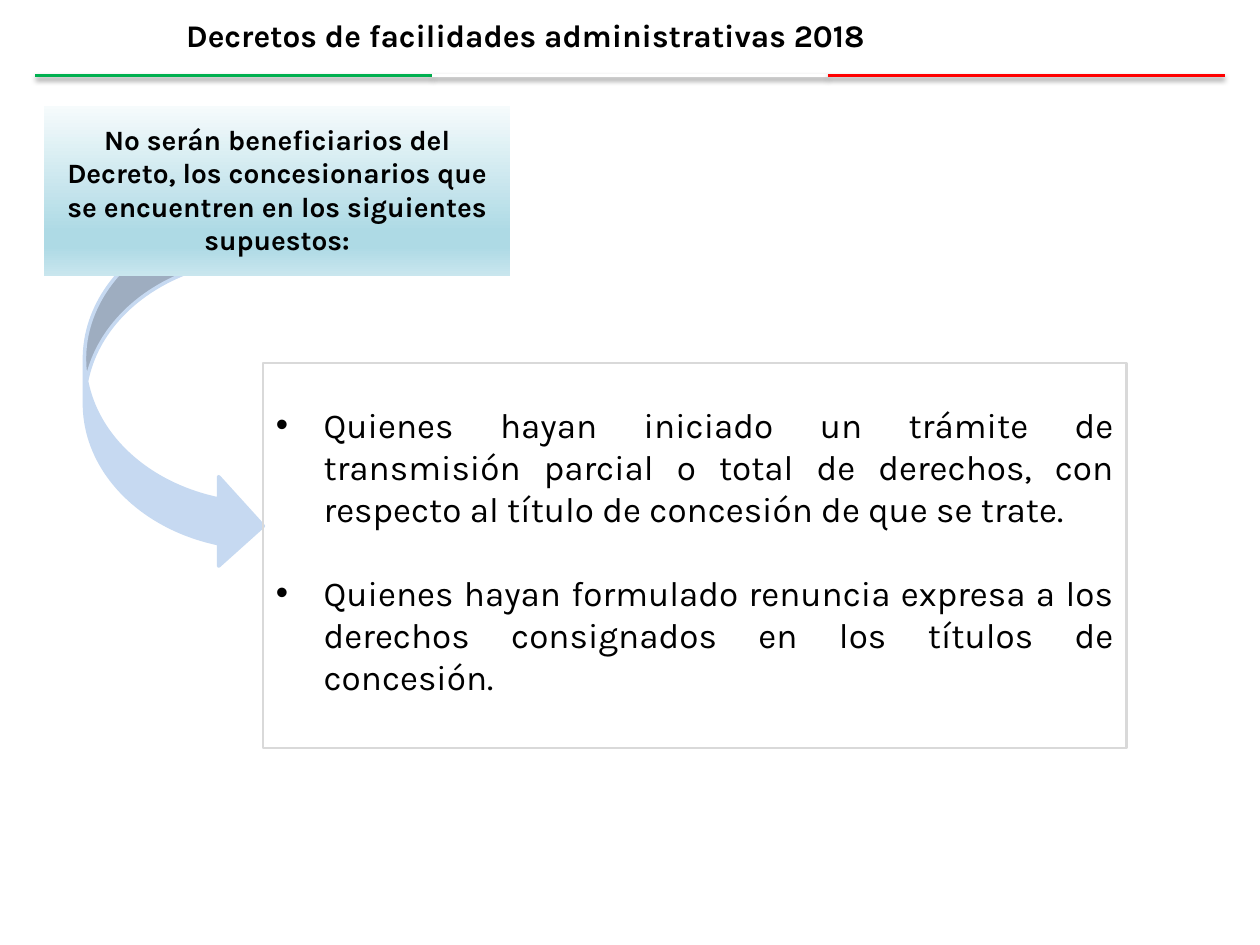
from dataclasses import dataclass

from lxml import etree
from pptx import Presentation
from pptx.dml.color import RGBColor
from pptx.enum.shapes import MSO_CONNECTOR, MSO_SHAPE
from pptx.enum.text import MSO_ANCHOR, PP_ALIGN
from pptx.oxml.ns import qn
from pptx.util import Pt

PX = 9144  # EMU in one px, 100 px to the inch
LINE = MSO_CONNECTOR.STRAIGHT
RECT = MSO_SHAPE.RECTANGLE
ARROW = MSO_SHAPE.CURVED_RIGHT_ARROW
TOP = MSO_ANCHOR.TOP
LEFT, MID, JUST = PP_ALIGN.LEFT, PP_ALIGN.CENTER, PP_ALIGN.JUSTIFY


@dataclass(frozen=True)
class Theme:
    font: str = "Karla"
    ink: str = "000000"
    paper: str = "FFFFFF"
    flag: tuple = ("00B050", "FFFFFF", "FF0000")
    arrow: str = "C6D9F1"
    frame: str = "D9D9D9"
    fade: tuple = ((0, "F6FBFC"), (74, "AEDAE5"), (83, "AEDAE5"), (100, "C9E6EE"))
    title: int = 18
    lead: int = 16
    body: int = 20


def rgb(code):
    return RGBColor.from_string(code)


def node(parent, tag, **attrs):
    return etree.SubElement(parent, qn(tag), {k: str(v) for k, v in attrs.items()})


def write(shape, texts, size, theme, bold=False, align=LEFT, top=5, gap=0, indent=0):
    """Fill a shape with paragraphs; an indent also gives them bullets."""
    frame = shape.text_frame
    frame.word_wrap = True
    frame.vertical_anchor = TOP
    frame.margin_top = top * PX
    for i, text in enumerate(texts):
        para = frame.paragraphs[0] if i == 0 else frame.add_paragraph()
        para.alignment = align
        if indent:
            props = para._p.get_or_add_pPr()
            props.set("marL", str(indent * PX))
            props.set("indent", str(-indent * PX))
            node(props, "a:buFont", typeface="Arial")
            node(props, "a:buChar", char="•")
        if i and gap:
            para.space_before = Pt(gap)
        run = para.add_run()
        run.text = text
        font = run.font
        font.name, font.size, font.bold = theme.font, Pt(size), bold
        font.color.rgb = rgb(theme.ink)


class Canvas:
    def __init__(self, slide, theme):
        self.slide, self.theme = slide, theme

    def rule(self, left, right, y, color):
        """Horizontal line with a soft shadow below it."""
        line = self.slide.shapes.add_connector(
            LINE, left * PX, y * PX, right * PX, y * PX)
        line.line.color.rgb = rgb(color)
        line.line.width = Pt(2)
        effects = node(line._element.spPr, "a:effectLst")
        shade = node(effects, "a:outerShdw", blurRad=Pt(3.1), dist=Pt(1.6),
                     dir=5400000, algn="t", rotWithShape=0)
        tint = node(shade, "a:srgbClr", val=self.theme.ink)
        node(tint, "a:alpha", val=38000)

    def shape(self, kind, box, fill=None, line=None, width=1.25):
        shape = self.slide.shapes.add_shape(kind, *(n * PX for n in box))
        shape.shadow.inherit = False
        if fill:
            shape.fill.solid()
            shape.fill.fore_color.rgb = rgb(fill)
        else:
            shape.fill.background()
        if line:
            shape.line.color.rgb = rgb(line)
            shape.line.width = Pt(width)
        else:
            shape.line.fill.background()
        return shape

    def fade(self, shape, stops):
        """Blend a shape's fill from top to bottom."""
        shape.fill.gradient()
        shape.fill.gradient_angle = 270
        bands = shape._element.spPr.find(".//" + qn("a:gsLst"))
        for old in list(bands):
            bands.remove(old)
        for pos, color in stops:
            node(node(bands, "a:gs", pos=pos * 1000), "a:srgbClr", val=color)


def main():
    deck = Presentation()
    deck.slide_width, deck.slide_height = 1000 * PX, 750 * PX
    theme = Theme()
    page = Canvas(deck.slides.add_slide(deck.slide_layouts[6]), theme)

    # Flag rule under the title
    edges = (28, 343, 657, 972)
    for left, right, color in zip(edges, edges[1:], theme.flag):
        page.rule(left, right, 60, color)

    # Arrow from the lead to the cases
    page.shape(ARROW, (67, 170, 142, 283), theme.arrow, theme.arrow, 2)

    # Title
    title = page.shape(RECT, (138, 5, 654, 47), theme.paper)
    write(title, ["Decretos de facilidades administrativas 2018"],
          theme.title, theme, bold=True, top=8)

    # Lead
    lead = page.shape(RECT, (35, 84, 370, 135))
    page.fade(lead, theme.fade)
    write(lead, ["No serán beneficiarios del Decreto, los concesionarios que "
                 "se encuentren en los siguientes supuestos:"],
          theme.lead, theme, bold=True, align=MID, top=13)

    # Cases
    cases = page.shape(RECT, (209, 288, 685, 306), line=theme.frame)
    write(cases, ["Quienes hayan iniciado un trámite de transmisión parcial o total "
                  "de derechos, con respecto al título de concesión de que se trate.",
                  "Quienes hayan formulado renuncia expresa a los derechos "
                  "consignados en los títulos de concesión."],
          theme.body, theme, align=JUST, top=32, gap=24, indent=38)

    deck.save("out.pptx")


if __name__ == "__main__":
    main()
